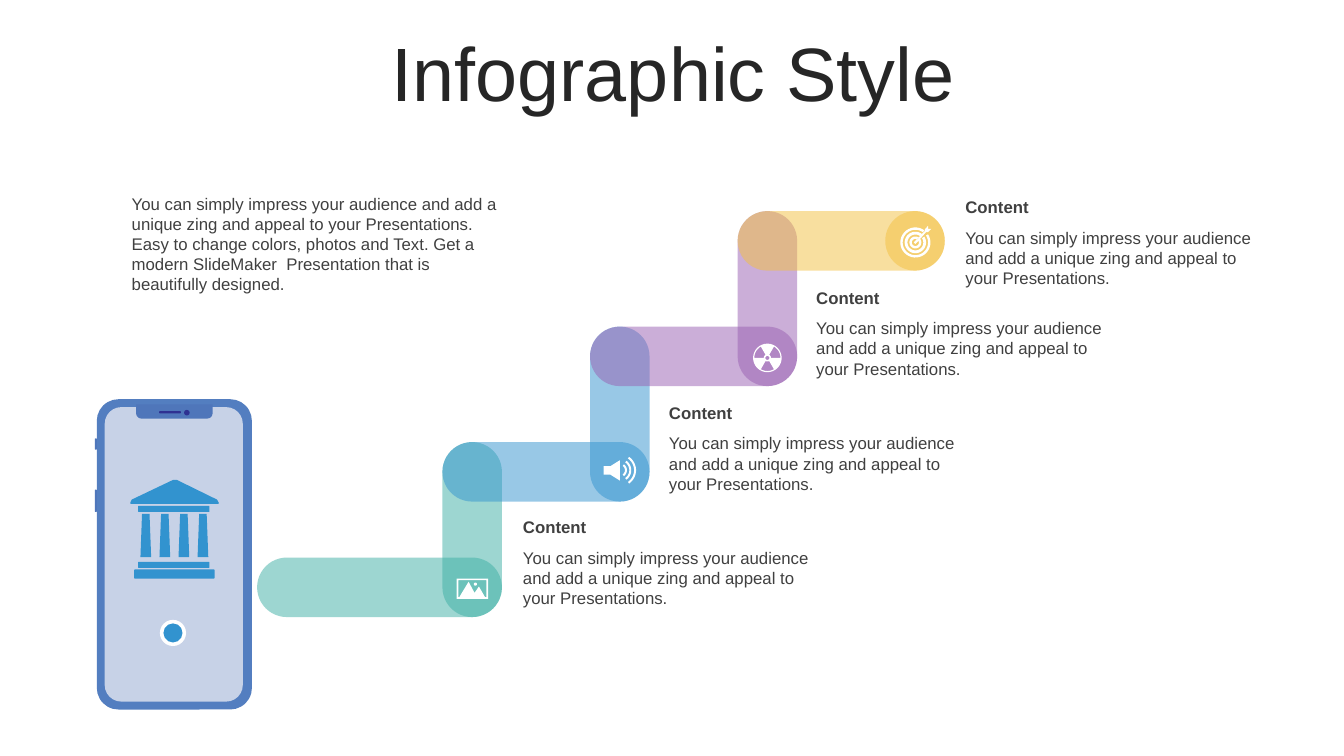
import math

import pptx
import pptx.dml.color
import pptx.enum.shapes
import pptx.enum.text
import pptx.oxml.ns
import pptx.util
from lxml import etree
from pptx.util import Cm

COLORS = {
    "title": "262626", "text": "404040", "white": "FFFFFF",
    "teal": "3CAFA4", "blue": "3293CF", "purple": "995FB2", "yellow": "F3C040",
    "case": "537EC0", "screen": "C7D2E7", "trim": "4F76BA", "navy": "2E3192",
}
SHAPE = pptx.enum.shapes.MSO_SHAPE
ALIGN = pptx.enum.text.PP_ALIGN
ANCHOR = pptx.enum.text.MSO_ANCHOR

STEP_COLORS = ["teal", "blue", "purple", "yellow"]
STEP_LEFT, STEP_TOP = 11.15, 14.05
STEP_RUN, STEP_RISE, THICKNESS = 3.72, 2.91, 1.5
CAPTION_CORNERS = [(12.93, 12.9), (16.61, 10.01), (20.32, 7.11), (24.08, 4.83)]
CAPTION = "You can simply impress your audience and add a unique zing and appeal to your Presentations."
INTRO = CAPTION + (" Easy to change colors, photos and Text. Get a modern SlideMaker  Presentation"
                   " that is beautifully designed.")


def rgb(color):
    return pptx.dml.color.RGBColor.from_string(COLORS[color])


def paint(shape, color):
    shape.shadow.inherit = False
    shape.fill.solid()
    shape.fill.fore_color.rgb = rgb(color)
    shape.line.fill.background()


def add_solid(shapes, kind, left, top, width, height, color, adjustments=()):
    shape = shapes.add_shape(kind, Cm(left), Cm(top), Cm(width), Cm(height))
    for index, value in enumerate(adjustments):
        shape.adjustments[index] = value
    paint(shape, color)
    return shape


def add_disc(shapes, center, radius, color):
    x, y = center
    return add_solid(shapes, SHAPE.OVAL, x - radius, y - radius, 2 * radius, 2 * radius, color)


def make_translucent(shape):
    qn = pptx.oxml.ns.qn
    fill_color = shape._element.spPr.find(qn("a:solidFill")).find(qn("a:srgbClr"))
    etree.SubElement(fill_color, qn("a:alpha"), val="50000")


def add_pipe(shapes, left, top, width, height, color):
    make_translucent(add_solid(shapes, SHAPE.ROUNDED_RECTANGLE, left, top, width, height, color, [0.5]))


def add_outline(shapes, contours, color):
    contours = [[(Cm(x), Cm(y)) for x, y in contour] for contour in contours]
    builder = shapes.build_freeform(*contours[0][0], scale=1.0)
    for index, contour in enumerate(contours):
        if index:
            builder.move_to(*contour[0])
        builder.add_line_segments(contour[1:], close=True)
    paint(builder.convert_to_shape(), color)


def arc_points(center, radius, start, end, count=32):
    x, y = center
    angles = [math.radians(start + (end - start) * i / count) for i in range(count + 1)]
    return [(x + radius * math.cos(a), y - radius * math.sin(a)) for a in angles]


def band(center, inner, outer, start, end):
    return arc_points(center, outer, start, end) + arc_points(center, inner, end, start)


def add_text(shapes, left, top, width, height, text, size=12, color="text", bold=False,
             anchor=ANCHOR.TOP, grow=True):
    box = shapes.add_textbox(Cm(left), Cm(top), Cm(width), Cm(height))
    frame = box.text_frame
    frame.word_wrap = True
    frame.vertical_anchor = anchor
    if grow:
        frame.auto_size = pptx.enum.text.MSO_AUTO_SIZE.SHAPE_TO_FIT_TEXT
    para = frame.paragraphs[0]
    para.text = text
    para.font.name = "Arial"
    para.font.size = pptx.util.Pt(size)
    para.font.bold = bold
    para.font.color.rgb = rgb(color)
    return para


def add_title(shapes):
    para = add_text(shapes, 0.89, 0.94, 32.16, 2.01, "Infographic Style", 54, "title",
                    anchor=ANCHOR.MIDDLE, grow=False)
    para.alignment = ALIGN.CENTER
    para.line_spacing = 0.9
    para.space_before = pptx.util.Pt(10)


def add_staircase(shapes):
    for index, color in enumerate(STEP_COLORS):
        left = STEP_LEFT + (index - 1) * STEP_RUN
        top = STEP_TOP - index * STEP_RISE
        start = left if index else 6.48
        end = left + STEP_RUN + THICKNESS
        add_pipe(shapes, start, top, end - start, THICKNESS, color)
        if index < len(STEP_COLORS) - 1:
            add_pipe(shapes, left + STEP_RUN, top - STEP_RISE, THICKNESS, STEP_RISE + THICKNESS, color)


def add_caption(shapes, left, top):
    group = shapes.add_group_shape().shapes
    add_text(group, left, top, 7.9, 0.77, "Content", bold=True, anchor=ANCHOR.MIDDLE)
    add_text(group, left, top + 0.78, 7.9, 1.8, CAPTION)


def add_photo_icon(shapes):
    add_solid(shapes, SHAPE.FRAME, 11.51, 14.58, 0.79, 0.51, "white", [0.08])
    peaks = [(11.81, 14.66), (11.96, 14.94), (12.07, 14.78), (12.22, 15.04), (11.58, 15.04)]
    add_outline(shapes, [peaks], "white")
    add_disc(shapes, (11.98, 14.72), 0.04, "white")


def add_speaker_icon(shapes):
    horn = [(15.62, 11.6), (15.62, 12.11), (15.38, 11.96), (15.21, 11.96), (15.21, 11.75), (15.38, 11.75)]
    waves = [band((15.62, 11.85), radius, radius + 0.05, -55, 55) for radius in (0.13, 0.24, 0.36)]
    add_outline(shapes, [horn] + waves, "white")


def add_radiation_icon(shapes):
    center = (19.34, 9.02)
    blades = [band(center, 0.09, 0.33, start, start + 60) for start in (0, 120, 240)]
    circles = [arc_points(center, radius, 0, 360) for radius in (0.36, 0.05)]
    add_outline(shapes, circles + blades, "white")


def add_target_icon(shapes):
    rings = [band((23.07, 6.11), inner, outer, 54, 393)
             for inner, outer in ((0.32, 0.38), (0.2, 0.27), (0.09, 0.15))]
    arrow = [(23.39, 5.69), (23.39, 5.77), (23.47, 5.77), (23.39, 5.85), (23.34, 5.85), (23.12, 6.1),
             (23.07, 6.15), (23.03, 6.11), (23.08, 6.06), (23.31, 5.82), (23.31, 5.78)]
    add_outline(shapes, rings + [arrow], "white")


def add_phone(shapes):
    group = shapes.add_group_shape().shapes
    rounded = SHAPE.ROUNDED_RECTANGLE
    add_solid(group, rounded, 2.44, 10.06, 3.91, 7.82, "case", [0.14])
    add_solid(group, rounded, 2.64, 10.26, 3.48, 7.42, "screen", [0.12])
    add_solid(group, SHAPE.ROUND_2_SAME_RECTANGLE, 3.43, 10.19, 1.93, 0.36, "trim", [0, 0.38])
    for top, height in ((11.05, 0.28), (12.34, 0.56)):
        add_solid(group, rounded, 2.39, top, 0.05, height, "trim", [0.3])
    add_solid(group, rounded, 4.01, 10.36, 0.55, 0.06, "navy", [0.5])
    add_disc(group, (4.71, 10.4), 0.07, "navy")


def add_bank(shapes):
    group = shapes.add_group_shape().shapes
    roof = [(3.28, 12.68), (3.32, 12.59), (4.37, 12.09), (4.45, 12.09), (5.47, 12.59),
            (5.52, 12.68), (5.49, 12.7), (3.31, 12.7)]
    add_outline(group, [roof], "blue")
    for left, top, width, height in ((3.48, 12.75, 1.8, 0.15), (3.48, 14.16, 1.8, 0.15),
                                     (3.38, 14.35, 2.03, 0.23)):
        add_solid(group, SHAPE.ROUNDED_RECTANGLE, left, top, width, height, "blue", [0.1])
    for index in range(4):
        add_solid(group, SHAPE.TRAPEZOID, 3.54 + 0.48 * index, 12.95, 0.27, 1.09, "blue", [0.15])


def add_home_button(shapes):
    group = shapes.add_group_shape().shapes
    add_disc(group, (4.36, 15.95), 0.33, "white")
    add_disc(group, (4.36, 15.95), 0.24, "blue")


def main():
    deck = pptx.Presentation()
    deck.slide_width, deck.slide_height = Cm(33.87), Cm(19.05)
    page = deck.slides.add_slide(deck.slide_layouts[6])
    shapes = page.shapes
    add_title(shapes)
    add_staircase(shapes)
    for left, top in CAPTION_CORNERS:
        add_caption(shapes, left, top)
    add_text(shapes, 3.07, 4.75, 9.98, 2.82, INTRO)
    add_pipe(shapes, STEP_LEFT + 3 * STEP_RUN, STEP_TOP - 3 * STEP_RISE, THICKNESS, THICKNESS, "yellow")
    add_speaker_icon(shapes)
    add_radiation_icon(shapes)
    add_photo_icon(shapes)
    add_target_icon(shapes)
    add_phone(shapes)
    add_bank(shapes)
    add_home_button(shapes)
    deck.save("out.pptx")


if __name__ == "__main__":
    main()
